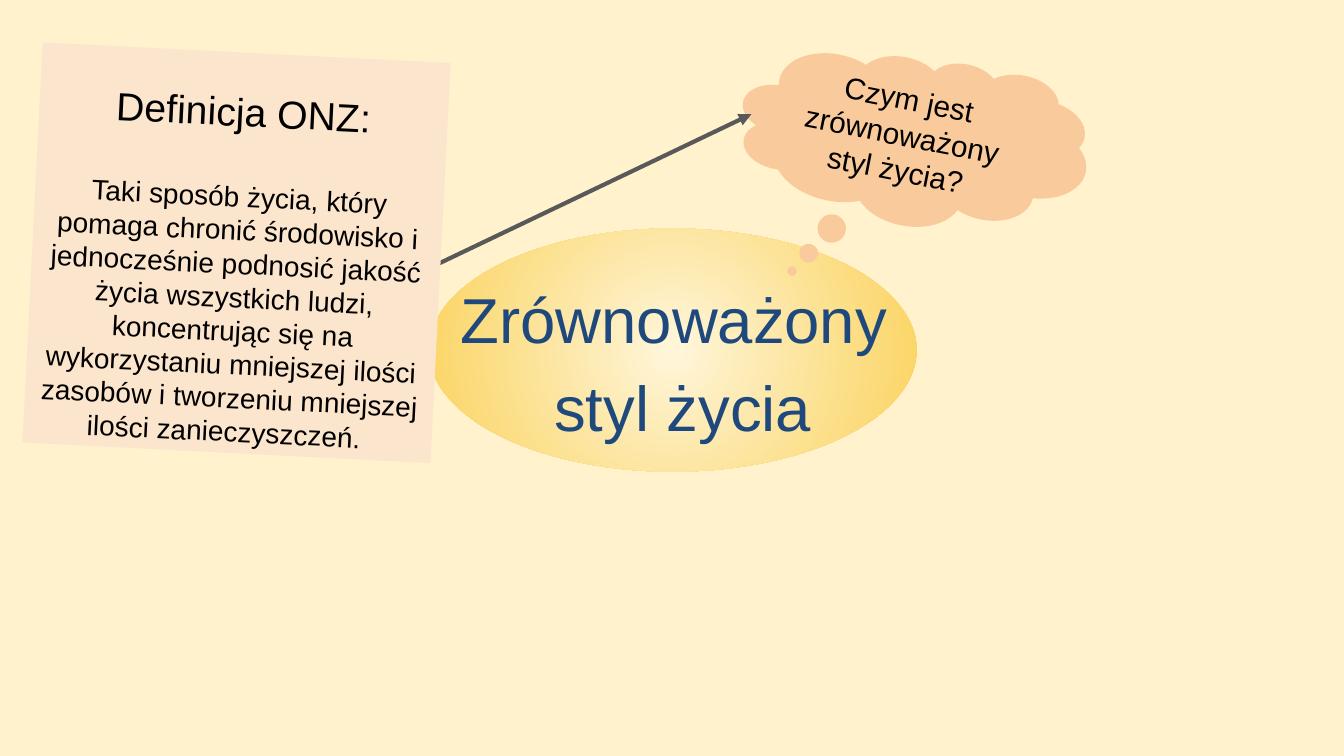
"""Build a slide on the sustainable lifestyle with its UN definition."""
from lxml.etree import SubElement
from pptx import Presentation
from pptx.dml.color import RGBColor
from pptx.enum.shapes import MSO_CONNECTOR, MSO_SHAPE
from pptx.enum.text import MSO_ANCHOR, MSO_AUTO_SIZE, PP_ALIGN
from pptx.oxml.ns import qn
from pptx.util import Pt

CREAM = RGBColor(0xFF, 0xF2, 0xCC)
PALE = RGBColor(0xFF, 0xF6, 0xDB)
GOLD = RGBColor(0xFA, 0xD2, 0x5C)
PEACH = RGBColor(0xF9, 0xCB, 0x9C)
PINK = RGBColor(0xFC, 0xE5, 0xCD)
NAVY = RGBColor(0x1F, 0x49, 0x7D)
GRAY = RGBColor(0x59, 0x59, 0x59)
BLACK = RGBColor(0, 0, 0)


def add_form(kind, box, color=None, turn=0):
    form = slide.shapes.add_shape(kind, *map(Pt, box))
    form.shadow.inherit = False
    form.line.fill.background()
    form.rotation = turn
    if color is not None:
        form.fill.solid()
        form.fill.fore_color.rgb = color
    return form


def set_text(form, lines, sizes, color, anchor, top=7.2):
    frame = form.text_frame
    frame.text = "\n".join(lines)
    frame.word_wrap = True
    frame.auto_size = MSO_AUTO_SIZE.NONE
    frame.vertical_anchor = anchor
    frame.margin_left = frame.margin_right = frame.margin_bottom = Pt(7.2)
    frame.margin_top = Pt(top)
    for para, size in zip(frame.paragraphs, sizes):
        para.alignment = PP_ALIGN.CENTER
        para.space_before = Pt(0)
        font = para.runs[0].font
        font.name, font.size, font.color.rgb = "Arial", Pt(size), color
    return frame.paragraphs


prs = Presentation()
prs.slide_width, prs.slide_height = Pt(720), Pt(405)
slide = prs.slides.add_slide(prs.slide_layouts[5])
slide.background.fill.solid()
slide.background.fill.fore_color.rgb = CREAM

oval = add_form(MSO_SHAPE.OVAL, (229.7, 122.4, 261.4, 130.3))
oval.fill.gradient()
for stop, color in zip(oval.fill.gradient_stops, (PALE, GOLD)):
    stop.color.rgb = color
grad = oval._element.spPr.find(qn("a:gradFill"))
grad.remove(grad.find(qn("a:lin")))
ring = SubElement(grad, qn("a:path"), path="circle")
SubElement(ring, qn("a:fillToRect"), {side: "50000" for side in "ltrb"})

title = slide.shapes.title
title.left, title.top, title.width, title.height = map(Pt, (200.2, 136.8, 331.2, 103.7))
for para in set_text(title, ("Zrównoważony ", "styl życia"), (34, 34), NAVY, MSO_ANCHOR.TOP):
    para.line_spacing = 1.15
title._element.addprevious(oval._element)

cloud = add_form(MSO_SHAPE.CLOUD_CALLOUT, (396, 29.5, 187.2, 91.4), PEACH, 11.1)
cloud.adjustments[0], cloud.adjustments[1] = -0.27, 0.89
set_text(cloud, ("Czym jest zrównoważony styl życia?",), (16,), BLACK, MSO_ANCHOR.MIDDLE)

arrow = slide.shapes.add_connector(MSO_CONNECTOR.STRAIGHT, Pt(235.5), Pt(141), Pt(402.5), Pt(61.2))
arrow.line.color.rgb = GRAY
arrow.line.width = Pt(2.25)
SubElement(arrow.line._get_or_add_ln(), qn("a:tailEnd"), type="triangle")
SubElement(arrow._element.spPr, qn("a:effectLst"))

note = add_form(MSO_SHAPE.RECTANGLE, (17.3, 28.1, 218.9, 214.6), PINK, 2.9)
body = (
    "Taki sposób życia, który pomaga chronić środowisko i jednocześnie "
    "podnosić jakość życia wszystkich ludzi, koncentrując się na "
    "wykorzystaniu mniejszej ilości zasobów i tworzeniu mniejszej "
    "ilości zanieczyszczeń. "
)
paras = set_text(note, ("Definicja ONZ:", body), (21, 15), BLACK, MSO_ANCHOR.TOP, 18.7)
paras[0].space_after = Pt(24)
arrow.begin_connect(note, 3)
arrow.begin_x, arrow.begin_y = Pt(235.5), Pt(141)

prs.save("out.pptx")
